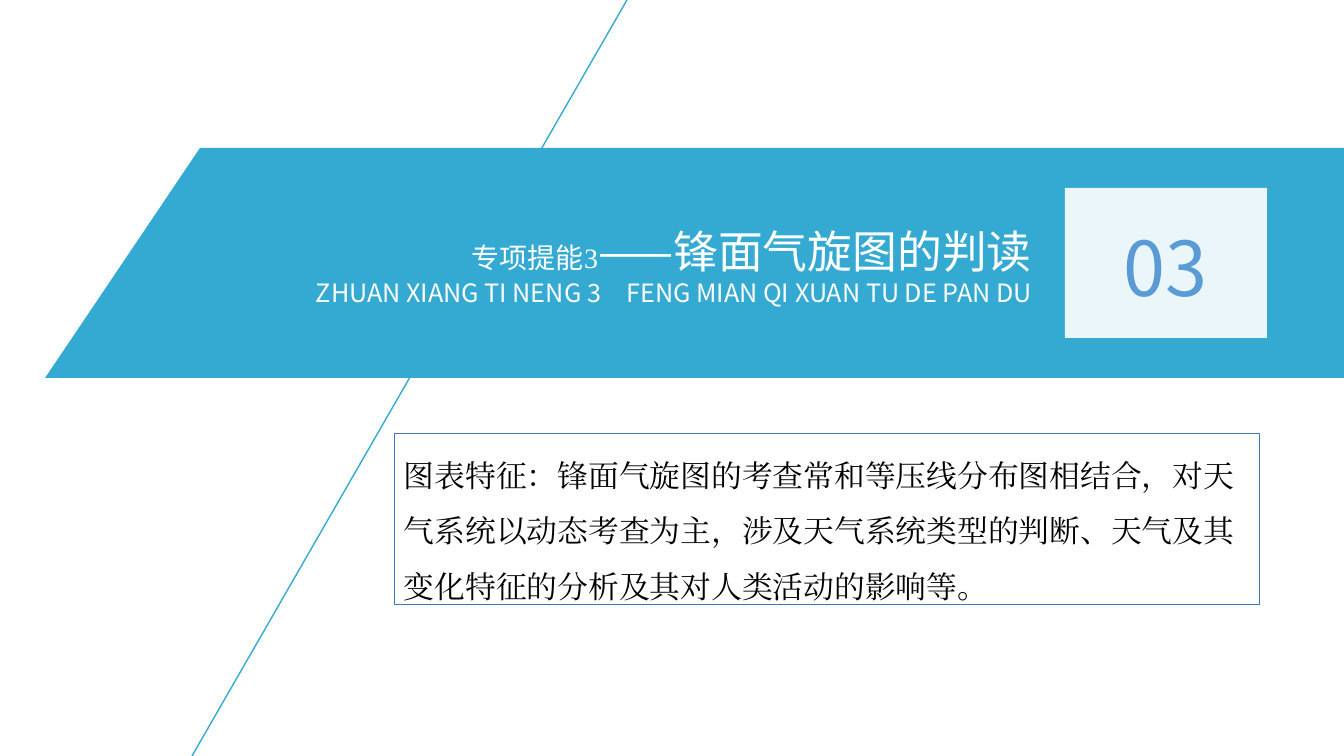
from lxml import etree
from pptx import Presentation
from pptx.dml.color import RGBColor
from pptx.enum.shapes import MSO_CONNECTOR, MSO_SHAPE
from pptx.enum.text import MSO_ANCHOR, PP_ALIGN
from pptx.oxml.ns import qn
from pptx.util import Pt

EMU_PER_PX = 914400 / 100.8
W, H = 1344, 756
BLUE = RGBColor(0x34, 0xAA, 0xD3)
NUMBER_BLUE = RGBColor(0x5B, 0x9B, 0xD5)
BORDER_BLUE = RGBColor(0x44, 0x72, 0xC4)
WHITE = RGBColor(0xFF, 0xFF, 0xFF)
BLACK = RGBColor(0, 0, 0)
SANS, SERIF = "Noto Sans CJK SC", "Times New Roman"
RECT, STRAIGHT = MSO_SHAPE.RECTANGLE, MSO_CONNECTOR.STRAIGHT
LEFT, CENTER, RIGHT = PP_ALIGN.LEFT, PP_ALIGN.CENTER, PP_ALIGN.RIGHT
TOP = MSO_ANCHOR.TOP


def px(*lengths):
    return [round(n * EMU_PER_PX) for n in lengths]


class SlideBuilder:
    def __init__(self, prs):
        self.s = prs.slides.add_slide(prs.slide_layouts[6])

    def line(self, *ends, color, width=1):
        c = self.s.shapes.add_connector(STRAIGHT, *px(*ends))
        c.line.color.rgb = color
        c.line.width = Pt(width)
        etree.SubElement(c._element.spPr, qn("a:effectLst"))

    def style(self, sp, fill, border=None, alpha=None):
        """Flat fill; alpha is the opacity in percent."""
        sp.shadow.inherit = False
        sp.fill.solid()
        sp.fill.fore_color.rgb = fill
        if alpha:
            clr = sp._element.spPr.find(qn("a:solidFill"))[0]
            etree.SubElement(clr, qn("a:alpha"), val=str(alpha * 1000))
        if border:
            sp.line.color.rgb = border
            sp.line.width = Pt(0.25)
        else:
            sp.line.fill.background()

    def polygon(self, points, fill):
        start, *rest = [px(*point) for point in points]
        fb = self.s.shapes.build_freeform(*start)
        fb.add_line_segments(rest)
        self.style(fb.convert_to_shape(), fill)

    def box(self, *area, fill, **look):
        sp = self.s.shapes.add_shape(RECT, *px(*area))
        self.style(sp, fill, **look)
        return sp

    def text_box(self, *area):
        return self.s.shapes.add_textbox(*px(*area))

    def text(self, sp, paragraphs, color, align, spacing=1.0):
        """Each paragraph is a list of (text, size, font) runs."""
        tf = sp.text_frame
        tf.word_wrap = True
        tf.vertical_anchor = TOP
        for i, runs in enumerate(paragraphs):
            p = tf.add_paragraph() if i else tf.paragraphs[0]
            p.alignment = align
            p.line_spacing = spacing
            for words, size, font in runs:
                r = p.add_run()
                r.text = words
                for name, value in {"size": Pt(size), "name": font}.items():
                    setattr(r.font, name, value)
                r.font.color.rgb = color
                etree.SubElement(r._r.rPr, qn("a:ea"), typeface=font)


def main():
    prs = Presentation()
    prs.slide_width, prs.slide_height = px(W, H)
    b = SlideBuilder(prs)

    b.line(627, 0, 192, H, color=BLUE)
    b.polygon([(200, 148), (W, 148), (W, 378), (45, 378)], BLUE)

    b.box(1065, 188, 202, 150, fill=WHITE, alpha=90)
    number = b.text_box(1111, 216, 110, 102)
    b.text(number, [[("03", 54, SANS)]], NUMBER_BLUE, CENTER)

    title = b.text_box(149, 219, 893, 95)
    b.text(title, [
        [("专项提能", 20, SANS), ("3", 20, SERIF), ("——锋面气旋图的判读", 32, SANS)],
        [("ZHUAN XIANG TI NENG 3　FENG MIAN QI XUAN TU DE PAN DU", 18, SANS)],
    ], WHITE, RIGHT)

    summary = b.box(394, 433, 865, 171, fill=WHITE, border=BORDER_BLUE)
    b.text(summary, [[(
        "图表特征：锋面气旋图的考查常和等压线分布图相结合，对天气系统以动态考查为主，"
        "涉及天气系统类型的判断、天气及其变化特征的分析及其对人类活动的影响等。",
        22, SERIF)]], BLACK, LEFT, spacing=1.5)

    prs.save("out.pptx")


if __name__ == "__main__":
    main()
